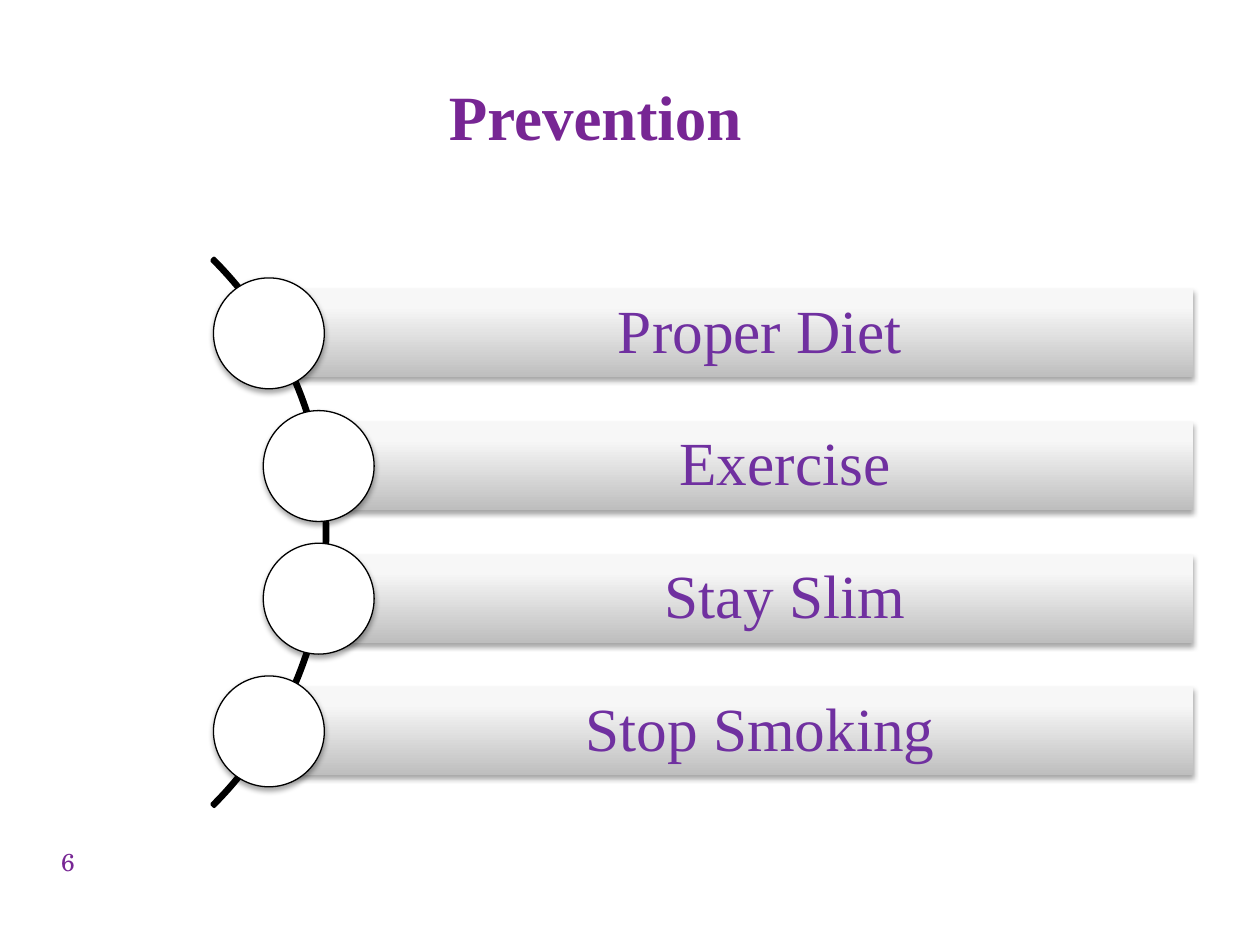
from copy import deepcopy
from dataclasses import dataclass
from math import sqrt

from lxml.etree import SubElement as Sub
from pptx import Presentation
from pptx.dml.color import RGBColor as Rgb
from pptx.enum.shapes import MSO_SHAPE as Kind
from pptx.enum.text import MSO_ANCHOR as Anchor, PP_ALIGN as Align
from pptx.oxml.ns import qn
from pptx.util import Inches, Pt

# The grid: 100 columns by 75 rows
COLS, ROWS = 100, 75
WIDE, HIGH = Inches(10), Inches(7.5)


@dataclass(frozen=True)
class Theme:
    font: str = "Times New Roman"
    page_font: str = "TeX Gyre Schola"
    head: str = "772694"
    label: str = "7030A0"
    ink: str = "000000"
    paper: str = "FFFFFF"
    fade: tuple = ((0, "BEBEBE"), (0.8, "F7F7F7"), (1, "F8F8F8"))
    head_size: int = 36
    label_size: int = 35
    page_size: int = 14


THEME = Theme()
ITEMS = ["Proper Diet", "Exercise", "Stay Slim", "Stop Smoking"]


def place(box):
    """Turn columns and rows into slide lengths."""
    x, y, w, h = box
    return [int(n) for n in (x * WIDE / COLS, y * HIGH / ROWS,
                             w * WIDE / COLS, h * HIGH / ROWS)]


def write(shape, text, font, size, color, bold=False, anchor=Anchor.MIDDLE):
    frame = shape.text_frame
    frame.word_wrap = True
    frame.vertical_anchor = anchor
    frame.text = text
    para = frame.paragraphs[0]
    para.alignment = Align.CENTER
    face = para.runs[0].font
    face.name, face.size, face.bold = font, Pt(size), bold
    face.color.rgb = Rgb.from_string(color)
    return frame


def cast(shape):
    """Drop a soft shadow straight down."""
    shape.shadow.inherit = False
    list_ = shape._element.spPr.find(qn("a:effectLst"))
    drop = Sub(list_, qn("a:outerShdw"), blurRad="40000", dist="23000",
               dir="5400000", rotWithShape="0")
    tone = Sub(drop, qn("a:srgbClr"), val=THEME.ink)
    Sub(tone, qn("a:alpha"), val="35000")


def shade(shape):
    """Fade from the bottom edge to the top."""
    fill = shape.fill
    fill.gradient()
    fill.gradient_angle = 90
    stops = shape._element.spPr.find(".//" + qn("a:gsLst"))
    stops.append(deepcopy(stops[-1]))
    for stop, (at, color) in zip(fill.gradient_stops, THEME.fade):
        stop.position = at
        stop.color.rgb = Rgb.from_string(color)


def edge(shape, width):
    shape.line.color.rgb = Rgb.from_string(THEME.ink)
    shape.line.width = Pt(width)


def add_head(slide, box, text):
    write(slide.shapes.add_textbox(*place(box)), text,
          THEME.font, THEME.head_size, THEME.head, bold=True)


def add_arc(slide, box):
    arc = slide.shapes.add_shape(Kind.BLOCK_ARC, *place(box))
    for i, value in enumerate((189, 27, 0.004)):
        arc.adjustments[i] = value
    arc.fill.background()
    edge(arc, 2)
    arc.shadow.inherit = False


def add_bar(slide, box, text):
    bar = slide.shapes.add_shape(Kind.RECTANGLE, *place(box))
    shade(bar)
    bar.line.fill.background()
    cast(bar)
    frame = write(bar, text, THEME.font, THEME.label_size, THEME.label)
    frame.margin_left = Inches(0.56)
    frame.margin_right = frame.margin_top = frame.margin_bottom = Inches(0.1)
    frame.paragraphs[0].line_spacing = 0.9


def add_dot(slide, box):
    dot = slide.shapes.add_shape(Kind.OVAL, *place(box))
    dot.fill.solid()
    dot.fill.fore_color.rgb = Rgb.from_string(THEME.paper)
    edge(dot, 0.75)
    cast(dot)


def add_list(slide, box, items):
    """Bars that start on a curve; box is the square around its circle."""
    x, y, size, _ = box
    mid_x, mid_y = x + size / 2, y + size / 2
    reach, step, bar, dot, right = 30.5, 10.53, 7, 8.8, 94.7
    add_arc(slide, box)
    for i, text in enumerate(items):
        rise = (i - (len(items) - 1) / 2) * step
        left = mid_x + sqrt(reach ** 2 - rise ** 2)
        row = mid_y + rise
        add_bar(slide, (left, row - bar / 2, right - left, bar), text)
        add_dot(slide, (left - dot / 2, row - dot / 2, dot, dot))


def add_page(slide, box, text):
    write(slide.shapes.add_textbox(*place(box)), text, THEME.page_font,
          THEME.page_size, THEME.head, anchor=Anchor.TOP)


def main():
    deck = Presentation()
    deck.slide_width, deck.slide_height = WIDE, HIGH
    slide = deck.slides.add_slide(deck.slide_layouts[6])
    add_head(slide, (10.6, 2.9, 73.3, 12.5), "Prevention")
    add_list(slide, (-35.5, 11.5, 61.5, 61.5), ITEMS)
    add_page(slide, (0, 66.7, 10.8, 5), "6")
    deck.save("out.pptx")


if __name__ == "__main__":
    main()
